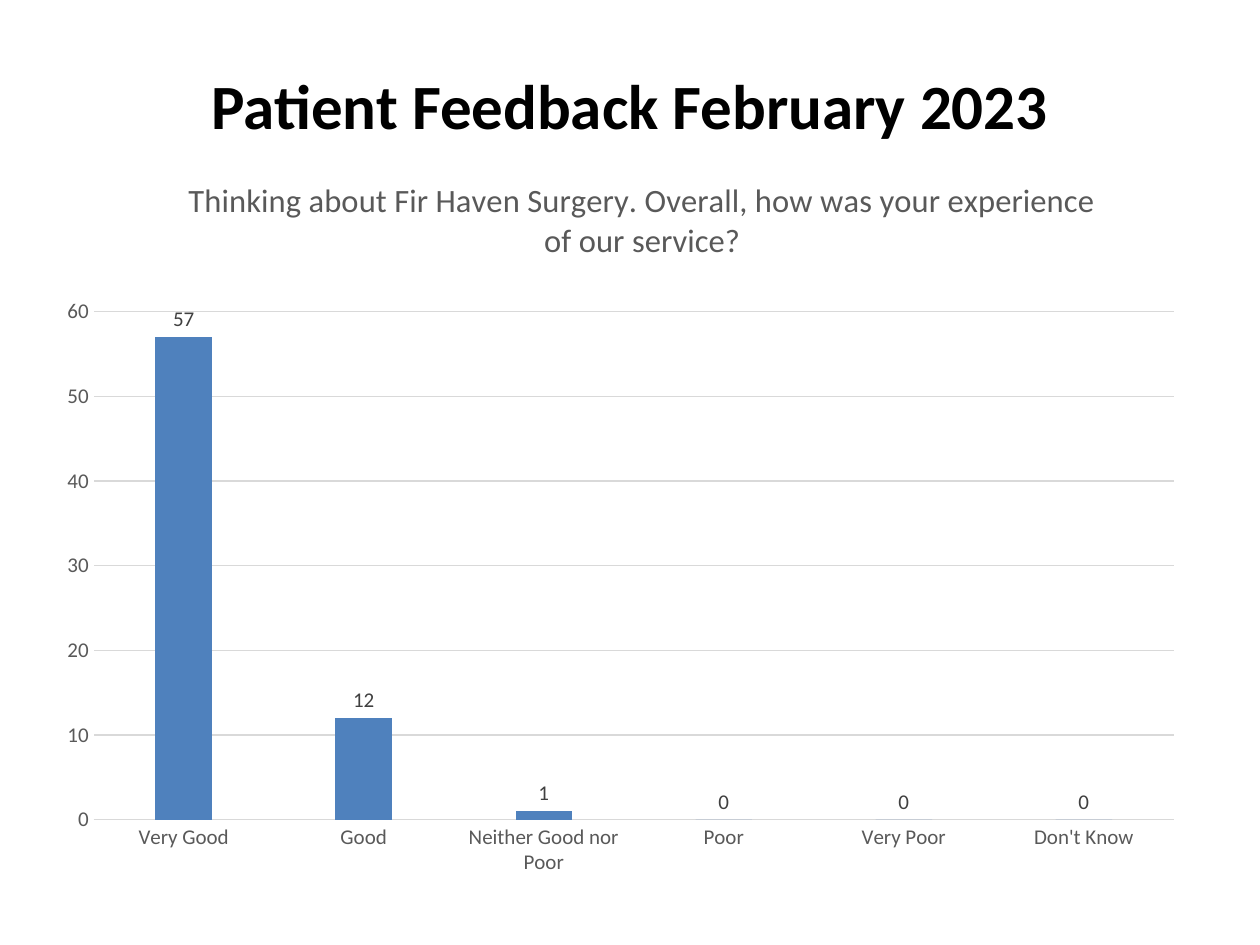
"""Build the patient feedback slide with its column chart."""
from lxml import etree
from pptx import Presentation
from pptx.chart.data import CategoryChartData
from pptx.dml.color import RGBColor
from pptx.enum import chart as charts, text
from pptx.oxml import ns
from pptx.util import Cm, Pt


def style_font(font, size, colour, bold=False):
    values = {"name": "Calibri", "size": Pt(size), "bold": bold}
    for name, value in values.items():
        setattr(font, name, value)
    font.color.rgb = RGBColor.from_string(colour)


def place(element, before, **fractions):
    for old in element.findall(ns.qn("c:layout")):
        element.remove(old)
    layout = etree.Element(ns.qn("c:layout"))
    manual = etree.SubElement(layout, ns.qn("c:manualLayout"))
    for name, value in fractions.items():
        etree.SubElement(manual, ns.qn("c:" + name)).set("val", str(value))
    element.insert(before, layout)


deck = Presentation()
deck.slide_width, deck.slide_height = Cm(25.4), Cm(19.05)
page = deck.slides.add_slide(deck.slide_layouts[6])

heading = page.shapes.add_textbox(Cm(1.27), Cm(0.13), Cm(22.86), Cm(3.18))
frame = heading.text_frame
frame.word_wrap = True
frame.vertical_anchor = text.MSO_ANCHOR.MIDDLE
para = frame.paragraphs[0]
para.alignment = text.PP_ALIGN.CENTER
para.line_spacing = 1.5
span = para.add_run()
span.text = "Patient Feedback February 2023"
style_font(span.font, 36, "000000", True)

ratings = {
    "Very Good": 57,
    "Good": 12,
    "Neither Good nor Poor": 1,
    "Poor": 0,
    "Very Poor": 0,
    "Don't Know": 0,
}
data = CategoryChartData()
data.categories = list(ratings)
data.add_series("Series 1", list(ratings.values()))
chart = page.shapes.add_chart(
    charts.XL_CHART_TYPE.COLUMN_CLUSTERED,
    Cm(0.89), Cm(3.3), Cm(23.24), Cm(14.63), data,
).chart
style_font(chart.font, 10, "000000")
chart.has_legend = False

chart.has_title = True
title = chart.chart_title
question = title.text_frame.paragraphs[0].add_run()
question.text = (
    "Thinking about Fir Haven Surgery. Overall, how was your "
    "experience of our service?"
)
style_font(question.font, 18.6, "595959")
place(title._element, 1, xMode="edge", yMode="edge", x=0.12, y=0.01)
place(
    chart._chartSpace.chart.plotArea, 0, layoutTarget="inner",
    xMode="edge", yMode="edge", x=0.043, y=0.204, w=0.937, h=0.7,
)

plot = chart.plots[0]
plot_format = {
    "gap_width": 219,
    "overlap": -27,
    "vary_by_categories": False,
    "has_data_labels": True,
}
for name, value in plot_format.items():
    setattr(plot, name, value)
labels = plot.data_labels
labels.show_value = True
labels.position = charts.XL_LABEL_POSITION.OUTSIDE_END
style_font(labels.font, 12, "404040")
fill = plot.series[0].format.fill
fill.solid()
fill.fore_color.rgb = RGBColor.from_string("4F81BD")

categories, scale = chart.category_axis, chart.value_axis
for axis in (categories, scale):
    axis.major_tick_mark = charts.XL_TICK_MARK.NONE
    axis.minor_tick_mark = charts.XL_TICK_MARK.NONE
    style_font(axis.tick_labels.font, 12, "595959")
scale_format = {
    "minimum_scale": 0,
    "maximum_scale": 60,
    "major_unit": 10,
    "has_major_gridlines": True,
}
for name, value in scale_format.items():
    setattr(scale, name, value)
scale.format.line.fill.background()
for line in (categories.format.line, scale.major_gridlines.format.line):
    line.width = Pt(0.75)
    line.color.rgb = RGBColor.from_string("D9D9D9")

deck.save("out.pptx")
